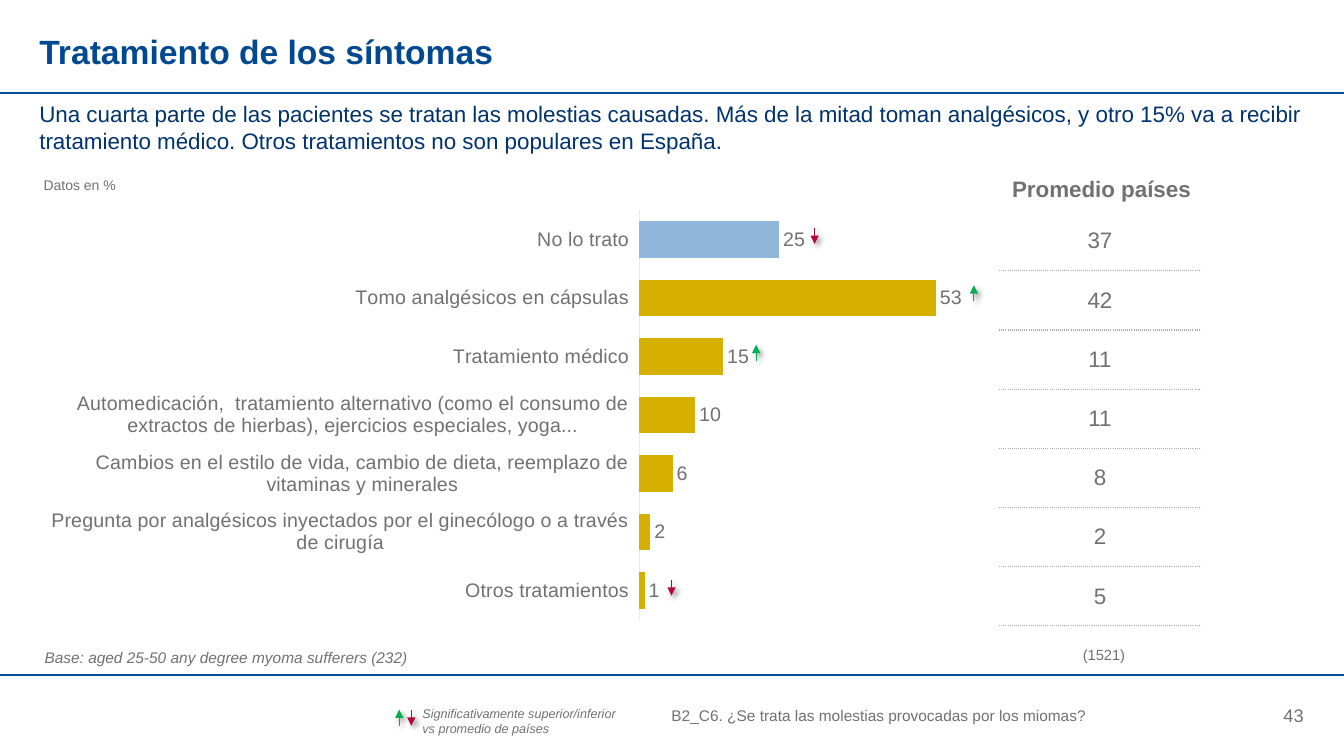
from dataclasses import dataclass

from lxml import etree
from pptx import Presentation
from pptx.chart.data import CategoryChartData
from pptx.dml.color import RGBColor
from pptx.enum.chart import XL_CHART_TYPE as CT, XL_LABEL_POSITION as LP, XL_TICK_LABEL_POSITION as TLP, XL_TICK_MARK as TM
from pptx.enum.shapes import MSO_CONNECTOR as MC
from pptx.enum.text import MSO_ANCHOR as MA, PP_ALIGN as PA
from pptx.oxml import parse_xml
from pptx.oxml.ns import nsdecls, qn
from pptx.util import Inches, Pt

FONT = "Arial"
NAVY, TITLE_BLUE, TEXT_BLUE = "004D96", "004990", "00336E"
GRAY, GOLD, LIGHT_BLUE = "717171", "D5B000", "91B6DB"
GREEN, RED = "00B050", "B30838"


@dataclass
class Label:
    text: str
    left: float
    top: float
    width: float
    height: float
    size: float
    color: str = GRAY
    align: PA = PA.LEFT
    anchor: MA = MA.TOP
    bold: bool = False
    italic: bool = False
    wrap: bool = True
    inset: float = 0


@dataclass
class Arrow:
    x: float
    top: float
    up: bool


@dataclass
class Treatment:
    name: str
    spain: int
    average: int
    color: str = GOLD


TITLE = Label("Tratamiento de los síntomas", 0.39, 0.31, 12.54, 0.44, 24, TITLE_BLUE, bold=True)
LABELS = [
    Label("Una cuarta parte de las pacientes se tratan las molestias causadas. Más de la mitad toman "
          "analgésicos, y otro 15% va a recibir tratamiento médico. Otros tratamientos no son "
          "populares en España.", 0.39, 0.99, 12.55, 0.43, 16, TEXT_BLUE),
    Label("B2_C6. ¿Se trata las molestias provocadas por los miomas?",
          6.66, 6.99, 5.11, 0.22, 11, anchor=MA.MIDDLE),
    Label("43", 11.87, 6.99, 1.06, 0.22, 13, align=PA.RIGHT, anchor=MA.MIDDLE),
    Label("Datos en %", 0.33, 1.75, 0.92, 0.17, 10, align=PA.CENTER),
    Label("Promedio países", 9.83, 1.67, 2.19, 0.38, 16, align=PA.CENTER, anchor=MA.BOTTOM,
          bold=True, inset=0.05),
    Label("Base: aged 25-50 any degree myoma sufferers (232)",
          0.41, 6.43, 3.67, 0.19, 11, align=PA.CENTER, italic=True),
    Label("(1521)", 10.74, 6.41, 0.43, 0.18, 10.5, wrap=False),
    Label("Significativamente superior/inferior vs promedio de países",
          4.19, 7, 2, 0.3, 9, italic=True),
]
TREATMENTS = [
    Treatment("No lo trato", 25, 37, LIGHT_BLUE),
    Treatment("Tomo analgésicos en cápsulas", 53, 42),
    Treatment("Tratamiento médico", 15, 11),
    Treatment("Automedicación,  tratamiento alternativo (como el consumo de extractos de hierbas), "
              "ejercicios especiales, yoga...", 10, 11),
    Treatment("Cambios en el estilo de vida, cambio de dieta, reemplazo de vitaminas y minerales", 6, 8),
    Treatment("Pregunta por analgésicos inyectados por el ginecólogo o a través de cirugía", 2, 2),
    Treatment("Otros tratamientos", 1, 5),
]
ARROWS = [
    Arrow(4.08, 7.04, False), Arrow(3.96, 7.04, True),
    Arrow(8.08, 2.26, False), Arrow(9.66, 2.83, True),
    Arrow(7.5, 3.42, True), Arrow(6.66, 5.75, False),
]
ARROW_LENGTH = 0.16


def rgb(value: str) -> RGBColor:
    return RGBColor.from_string(value)


def style_font(font, size: float, color: str = GRAY, bold: bool = False, italic: bool = False) -> None:
    font.name, font.size = FONT, Pt(size)
    font.bold, font.italic = bold, italic
    font.color.rgb = rgb(color)


def write_label(sp, label: Label) -> None:
    sp.left, sp.top = Inches(label.left), Inches(label.top)
    sp.width, sp.height = Inches(label.width), Inches(label.height)
    tf = sp.text_frame
    tf.word_wrap, tf.vertical_anchor = label.wrap, label.anchor
    tf.margin_left = tf.margin_right = tf.margin_top = tf.margin_bottom = Inches(label.inset)
    p = tf.paragraphs[0]
    p.alignment, p.space_before = label.align, Pt(0)
    r = p.add_run()
    r.text = label.text
    style_font(r.font, label.size, label.color, label.bold, label.italic)


def add_line(s, x1: float, y1: float, x2: float, y2: float, color: str, width: float):
    line = s.shapes.add_connector(MC.STRAIGHT, Inches(x1), Inches(y1), Inches(x2), Inches(y2))
    line.line.color.rgb = rgb(color)
    line.line.width = Pt(width)
    effects = etree.SubElement(line._element.spPr, qn("a:effectLst"))
    return line, effects


def add_arrow(s, arrow: Arrow) -> None:
    start, end = arrow.top, arrow.top + ARROW_LENGTH
    if arrow.up:
        start, end = end, start
    line, effects = add_line(s, arrow.x, start, arrow.x, end, GREEN if arrow.up else RED, 0.75)
    etree.SubElement(line.line._get_or_add_ln(), qn("a:tailEnd"), type="triangle")
    effects.append(parse_xml(
        f'<a:outerShdw {nsdecls("a")} blurRad="{Pt(4)}" dist="{Pt(3)}" dir="2700000" rotWithShape="0">'
        '<a:srgbClr val="000000"><a:alpha val="40000"/></a:srgbClr></a:outerShdw>'))


def add_treatment_chart(s) -> None:
    bars = TREATMENTS[::-1]
    data = CategoryChartData()
    data.categories = [t.name for t in bars]
    data.add_series("Series 1", [t.spain for t in bars])
    chart = s.shapes.add_chart(CT.BAR_CLUSTERED, Inches(0.5), Inches(1.92),
                               Inches(10.58), Inches(4.37), data).chart
    chart.has_legend = chart.has_title = False
    style_font(chart.font, 14)

    cat = chart.category_axis
    cat.major_tick_mark = cat.minor_tick_mark = TM.NONE
    cat.tick_label_position = TLP.LOW
    cat.format.line.color.rgb = rgb("EAEAEA")
    cat.format.line.width = Pt(0.75)
    style_font(cat.tick_labels.font, 14)
    val = chart.value_axis
    val.visible = val.has_major_gridlines = False
    val.minimum_scale, val.maximum_scale = 0, 60

    plot = chart.plots[0]
    plot.gap_width, plot.vary_by_categories = 59, False
    plot.has_data_labels = True
    labels = plot.data_labels
    labels.show_value, labels.position = True, LP.OUTSIDE_END
    style_font(labels.font, 14)
    series = plot.series[0]
    series.format.fill.solid()
    series.format.fill.fore_color.rgb = rgb(GOLD)
    for i, t in enumerate(bars):
        if t.color != GOLD:
            fill = series.points[i].format.fill
            fill.solid()
            fill.fore_color.rgb = rgb(t.color)

    area = chart._chartSpace.chart.plotArea
    for old in area.findall(qn("c:layout")):
        area.remove(old)
    area.insert(0, parse_xml(
        f'<c:layout {nsdecls("c")}><c:manualLayout><c:layoutTarget val="inner"/>'
        '<c:xMode val="edge"/><c:yMode val="edge"/><c:x val="0.552"/><c:y val="0.038"/>'
        '<c:w val="0.315"/><c:h val="0.93"/></c:manualLayout></c:layout>'))


def add_average_table(s) -> None:
    table = s.shapes.add_table(len(TREATMENTS), 1, Inches(9.91), Inches(2.1),
                               Inches(2), Inches(4.11)).table
    table.first_row = table.horz_banding = False
    for i, t in enumerate(TREATMENTS):
        cell = table.cell(i, 0)
        cell.vertical_anchor = MA.MIDDLE
        p = cell.text_frame.paragraphs[0]
        p.alignment = PA.CENTER
        r = p.add_run()
        r.text = str(t.average)
        style_font(r.font, 16)
        tc_pr = cell._tc.get_or_add_tcPr()
        for side in ("lnL", "lnR", "lnT", "lnB"):
            dotted = side == "lnB" or (side == "lnT" and i > 0)
            paint = ('<a:solidFill><a:srgbClr val="AAAAAA"/></a:solidFill><a:prstDash val="sysDot"/>'
                     if dotted else '<a:noFill/>')
            tc_pr.append(parse_xml(f'<a:{side} {nsdecls("a")} w="{Pt(1)}">{paint}</a:{side}>'))
        cell.fill.background()


def main() -> None:
    prs = Presentation()
    prs.slide_width, prs.slide_height = Inches(13.33), Inches(7.5)
    s = prs.slides.add_slide(prs.slide_layouts[5])
    for y in (0.92, 6.7):
        add_line(s, 0, y, 13.33, y, NAVY, 1.5)
    write_label(s.shapes.title, TITLE)
    for label in LABELS:
        write_label(s.shapes.add_textbox(0, 0, 0, 0), label)
    add_treatment_chart(s)
    add_average_table(s)
    for arrow in ARROWS:
        add_arrow(s, arrow)
    prs.save("out.pptx")


if __name__ == "__main__":
    main()
